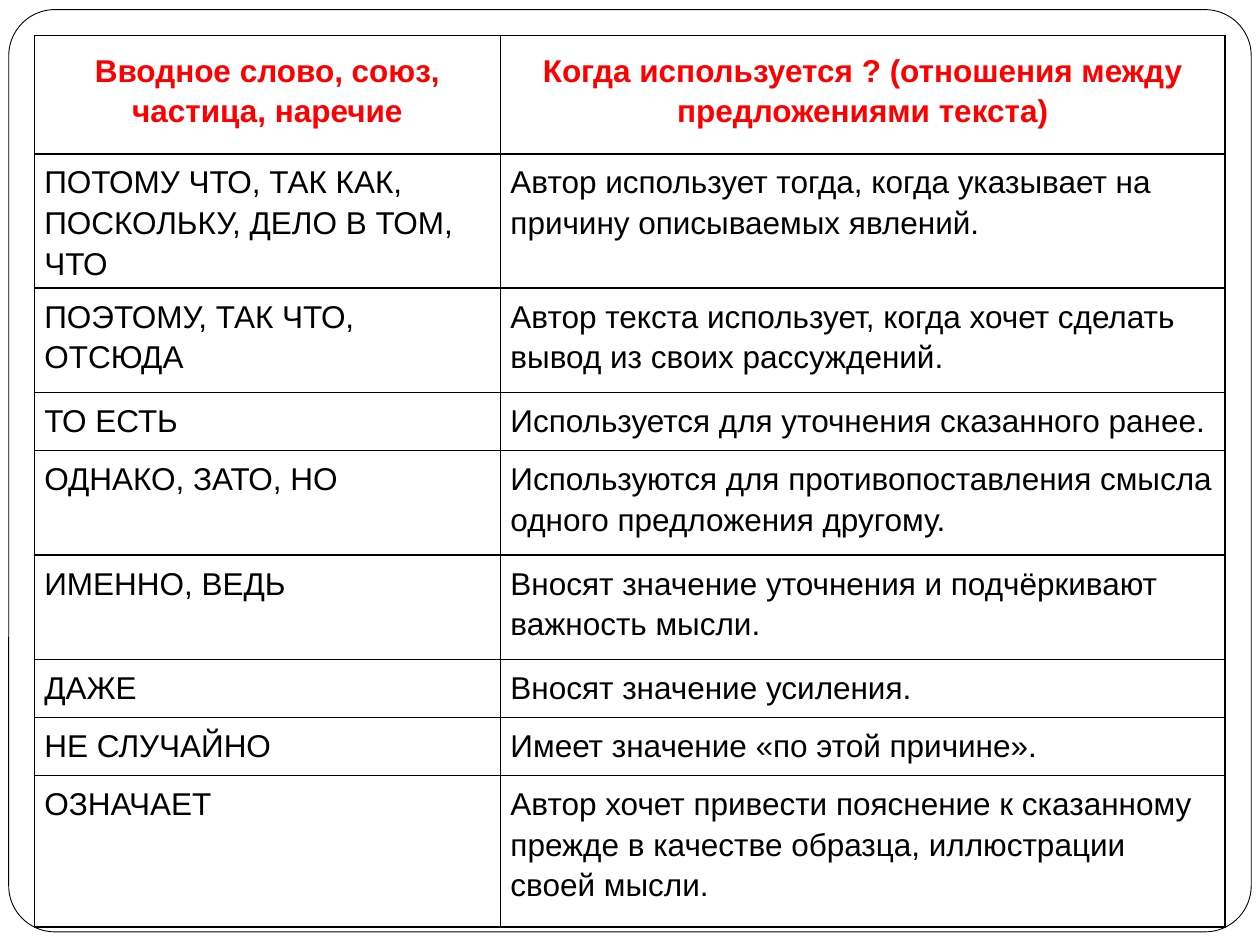
from lxml.etree import SubElement
from pptx import Presentation
from pptx.dml.color import RGBColor
from pptx.enum.shapes import MSO_SHAPE
from pptx.enum.text import PP_ALIGN
from pptx.oxml.ns import qn
from pptx.util import Pt

COLORS = {"paper": "FFFFFF", "line": "000000", "heading": "FF0000", "text": "000000"}
FONT = "Arial"
COLUMN_WIDTHS = (266.4, 414)
HEADING_HEIGHT = 67.5
ONE_LINE, TWO_LINES, THREE_LINES = 33.12, 59.76, 86.4
HEADINGS = (
    "Вводное слово, союз, частица, наречие",
    "Когда используется ? (отношения между предложениями текста)",
)
ROWS = (
    (TWO_LINES, "ПОТОМУ ЧТО, ТАК КАК, ПОСКОЛЬКУ, ДЕЛО В ТОМ, ЧТО",
     "Автор использует тогда, когда указывает на причину описываемых явлений."),
    (TWO_LINES, "ПОЭТОМУ, ТАК ЧТО, ОТСЮДА",
     "Автор текста использует, когда хочет сделать вывод из своих рассуждений."),
    (ONE_LINE, "ТО ЕСТЬ", "Используется для уточнения сказанного ранее."),
    (TWO_LINES, "ОДНАКО, ЗАТО, НО",
     "Используются для противопоставления смысла одного предложения другому."),
    (TWO_LINES, "ИМЕННО, ВЕДЬ",
     "Вносят значение уточнения и подчёркивают важность мысли."),
    (ONE_LINE, "ДАЖЕ", "Вносят значение усиления."),
    (ONE_LINE, "НЕ СЛУЧАЙНО", "Имеет значение «по этой причине»."),
    (THREE_LINES, "ОЗНАЧАЕТ",
     "Автор хочет привести пояснение к сказанному прежде в качестве образца, "
     "иллюстрации своей мысли."),
)


def color(name):
    """Return the named colour."""
    return RGBColor.from_string(COLORS[name])


def add_frame(slide, left, top, width, height):
    """Draw the rounded frame around the slide."""
    frame = slide.shapes.add_shape(
        MSO_SHAPE.ROUNDED_RECTANGLE, Pt(left), Pt(top), Pt(width), Pt(height))
    frame.adjustments[0] = 0.05
    frame.shadow.inherit = False
    frame.fill.solid()
    frame.fill.fore_color.rgb = color("paper")
    frame.line.color.rgb = color("line")
    frame.line.width = Pt(0.5)


def add_borders(cell):
    """Rule all four sides of a cell."""
    properties = cell._tc.get_or_add_tcPr()
    for side in ("lnL", "lnR", "lnT", "lnB"):
        border = SubElement(properties, qn(f"a:{side}"), w=str(Pt(1)))
        fill = SubElement(border, qn("a:solidFill"))
        SubElement(fill, qn("a:srgbClr"), val=COLORS["line"])


def fill_cell(cell, text, heading):
    """Write and format one cell."""
    add_borders(cell)
    cell.fill.solid()
    cell.fill.fore_color.rgb = color("paper")
    horizontal, vertical = (11.5, 7.2) if heading else (5.76, 3.6)
    cell.margin_left = cell.margin_right = Pt(horizontal)
    cell.margin_top = cell.margin_bottom = Pt(vertical)
    paragraph = cell.text_frame.paragraphs[0]
    paragraph.alignment = PP_ALIGN.CENTER if heading else PP_ALIGN.LEFT
    paragraph.line_spacing = 1.15
    run = paragraph.add_run()
    run.text = text
    run.font.name = FONT
    run.font.size = Pt(18)
    run.font.bold = heading
    run.font.color.rgb = color("heading" if heading else "text")


def add_usage_table(slide, left, top):
    """Add the table of linking words and their uses."""
    rows = ((HEADING_HEIGHT, *HEADINGS), *ROWS)
    height = sum(row[0] for row in rows)
    table = slide.shapes.add_table(
        len(rows), len(COLUMN_WIDTHS), Pt(left), Pt(top),
        Pt(sum(COLUMN_WIDTHS)), Pt(height)).table
    table.first_row = table.horz_banding = False
    for column, width in zip(table.columns, COLUMN_WIDTHS):
        column.width = Pt(width)
    for row_index, (row_height, *texts) in enumerate(rows):
        table.rows[row_index].height = Pt(row_height)
        for column_index, text in enumerate(texts):
            fill_cell(table.cell(row_index, column_index), text, row_index == 0)


def main():
    """Build and save the presentation."""
    presentation = Presentation()
    presentation.slide_width, presentation.slide_height = Pt(720), Pt(540)
    slide = presentation.slides.add_slide(presentation.slide_layouts[6])
    add_frame(slide, 5, 5.5, 710, 527)
    add_usage_table(slide, 19.6, 20.4)
    presentation.save("out.pptx")


if __name__ == "__main__":
    main()
